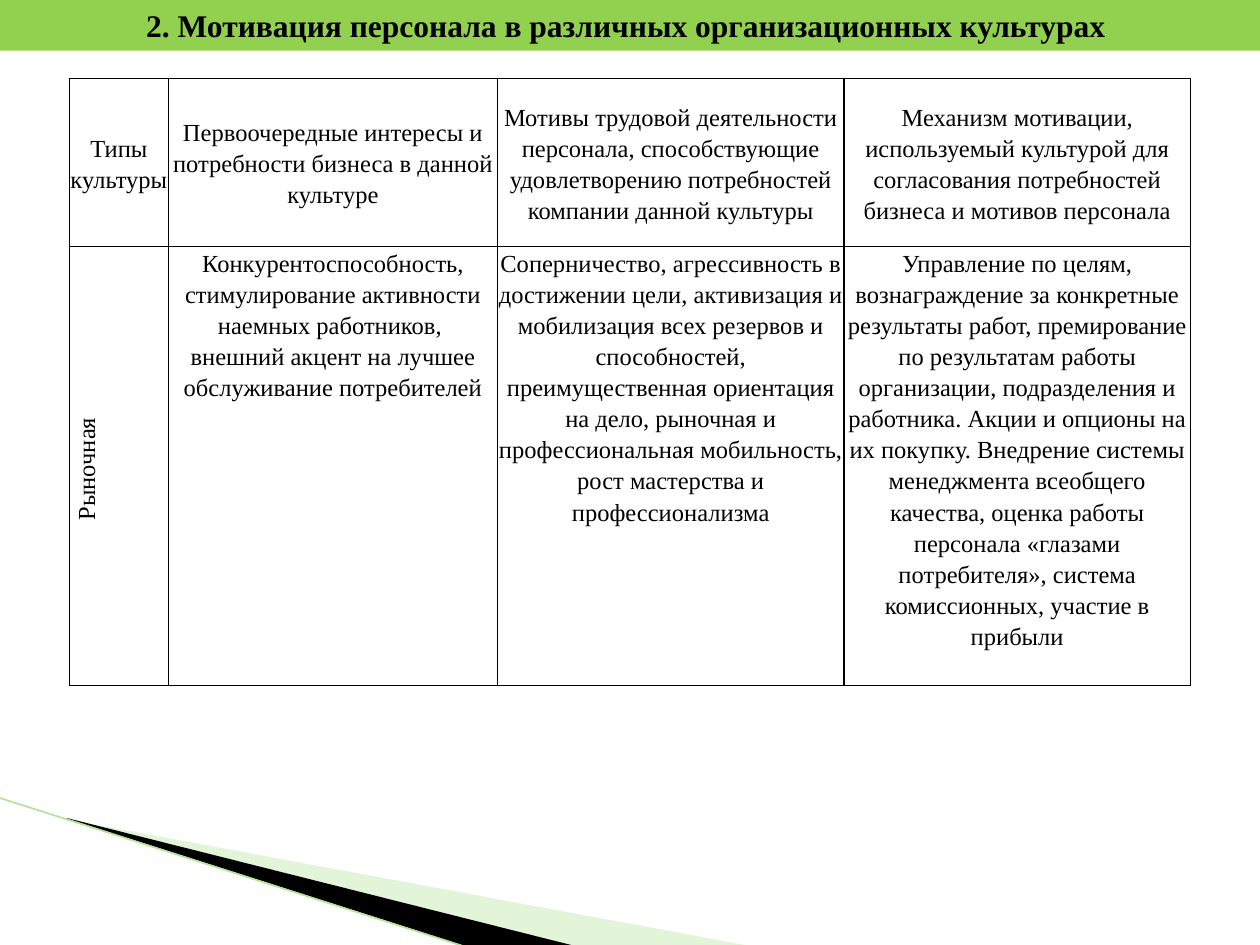
import pptx
import pptx.util
import pptx.dml.color
import pptx.enum.shapes
import pptx.enum.text
import pptx.oxml
import pptx.oxml.ns
from lxml import etree

Pt = pptx.util.Pt
RGBColor = pptx.dml.color.RGBColor
CENTER = pptx.enum.text.PP_ALIGN.CENTER
MIDDLE = pptx.enum.text.MSO_ANCHOR.MIDDLE
TOP = pptx.enum.text.MSO_ANCHOR.TOP

BLACK = RGBColor(0x00, 0x00, 0x00)
WHITE = RGBColor(0xFF, 0xFF, 0xFF)
BANNER = RGBColor(0x92, 0xD0, 0x50)
PALE = RGBColor(0xB8, 0xE7, 0xA1)
EDGE = RGBColor(0xB1, 0xE3, 0x99)
FONT = "Times New Roman"

TITLE = "2. Мотивация персонала в различных организационных культурах "
# Each cell is a list of paragraphs
HEADER = [
    ["Типы культуры"],
    ["Первоочередные интересы и потребности бизнеса в данной культуре"],
    ["Мотивы трудовой деятельности персонала, способствующие удовлетворению "
     "потребностей компании данной культуры"],
    ["Механизм мотивации, используемый культурой для согласования "
     "потребностей бизнеса и мотивов персонала"],
]
MARKET = [
    ["Рыночная "],
    ["Конкурентоспособность, стимулирование активности наемных работников, ",
     "внешний акцент на лучшее обслуживание потребителей"],
    ["Соперничество, агрессивность в достижении цели, активизация и "
     "мобилизация всех резервов и способностей, преимущественная ориентация "
     "на дело, рыночная и профессиональная мобильность, рост мастерства и "
     "профессионализма"],
    ["Управление по целям, вознаграждение за конкретные результаты работ, "
     "премирование по результатам работы организации, подразделения и "
     "работника. Акции и опционы на их покупку. Внедрение системы "
     "менеджмента всеобщего качества, оценка работы персонала «глазами "
     "потребителя», система комиссионных, участие в прибыли"],
]
ROWS = [HEADER, MARKET]
COL_WIDTHS = [56.7, 188, 198, 198]
ROW_HEIGHTS = [96, 251]
TABLE_LEFT, TABLE_TOP = 39.6, 44.8

WEDGES = [  # points, colour, opacity in percent
    ([(39.6, 468.5), (428.4, 540.5), (328.3, 540.5), (39.6, 468)], PALE, 40),
    ([(38.2, 467.5), (329, 540.7), (267.8, 541.2), (38.9, 468)], BLACK, 100),
]


def sub(parent, tag, **attrs):
    return etree.SubElement(parent, pptx.oxml.ns.qn(tag), attrs)


def set_font(p, size, bold=False):
    for name, value in {"name": FONT, "size": Pt(size), "bold": bold}.items():
        for r in p.runs:
            setattr(r.font, name, value)
    for r in p.runs:
        r.font.color.rgb = BLACK


def add_wedge(slide, points, color, opacity):
    builder = slide.shapes.build_freeform(*map(Pt, points[0]), scale=1.0)
    builder.add_line_segments([(Pt(x), Pt(y)) for x, y in points[1:]])
    sp = builder.convert_to_shape()
    sp.shadow.inherit = False
    sp.fill.solid()
    sp.fill.fore_color.rgb = color
    sp.line.fill.background()
    if opacity < 100:
        clr = sp._element.spPr.find(".//" + pptx.oxml.ns.qn("a:srgbClr"))
        sub(clr, "a:alpha", val=str(opacity * 1000))


def add_edge(slide):
    line = slide.shapes.add_connector(
        pptx.enum.shapes.MSO_CONNECTOR.STRAIGHT,
        Pt(-0.7), Pt(455.8), Pt(267.1), Pt(541.4))
    line.line.color.rgb = EDGE
    line.line.width = Pt(0.95)
    sub(line._element.spPr, "a:effectLst")


def add_banner(slide, width):
    sp = slide.shapes.add_shape(
        pptx.enum.shapes.MSO_SHAPE.RECTANGLE, 0, 0, width, Pt(29))
    sp.shadow.inherit = False
    sp.fill.solid()
    sp.fill.fore_color.rgb = BANNER
    sp.line.fill.background()
    tf = sp.text_frame
    tf.word_wrap = True
    tf.auto_size = pptx.enum.text.MSO_AUTO_SIZE.SHAPE_TO_FIT_TEXT
    p = tf.paragraphs[0]
    p.text = TITLE
    p.alignment = CENTER
    set_font(p, 18, bold=True)


def fill_cell(cell, paragraphs, anchor, hanging):
    margins = {"margin_left": Pt(0.7), "margin_right": Pt(0.7),
               "margin_top": 0, "margin_bottom": 0, "vertical_anchor": anchor}
    for name, value in margins.items():
        setattr(cell, name, value)
    cell.text = "\n".join(paragraphs)
    for p in cell.text_frame.paragraphs:
        p.alignment = CENTER
        p.line_spacing = 1.15
        if hanging:
            pPr = p._p.get_or_add_pPr()
            pPr.set("marL", "0")
            pPr.set("indent", str(Pt(-2)))
        set_font(p, 14)
    tcPr = cell._tc.get_or_add_tcPr()
    for side in ("a:lnL", "a:lnR", "a:lnT", "a:lnB"):
        ln = sub(tcPr, side, w=str(Pt(1)))
        sub(sub(ln, "a:solidFill"), "a:srgbClr", val=str(BLACK))
    cell.fill.solid()
    cell.fill.fore_color.rgb = WHITE


def add_culture_table(slide):
    table = slide.shapes.add_table(
        len(ROWS), len(COL_WIDTHS), Pt(TABLE_LEFT), Pt(TABLE_TOP),
        Pt(sum(COL_WIDTHS)), Pt(sum(ROW_HEIGHTS))).table
    for column, width in zip(table.columns, COL_WIDTHS):
        column.width = Pt(width)
    for row, height in zip(table.rows, ROW_HEIGHTS):
        row.height = Pt(height)
    for i, row in enumerate(ROWS):
        for j, paragraphs in enumerate(row):
            body = i > 0 and j > 0
            fill_cell(table.cell(i, j), paragraphs, TOP if body else MIDDLE, body)
    table.cell(1, 0)._tc.get_or_add_tcPr().set("vert", "vert270")


def main():
    prs = pptx.Presentation()
    prs.slide_width, prs.slide_height = Pt(720), Pt(540)
    slide = prs.slides.add_slide(prs.slide_layouts[6])
    for wedge in WEDGES:
        add_wedge(slide, *wedge)
    add_edge(slide)
    add_banner(slide, prs.slide_width)
    add_culture_table(slide)
    prs.save("out.pptx")


if __name__ == "__main__":
    main()
